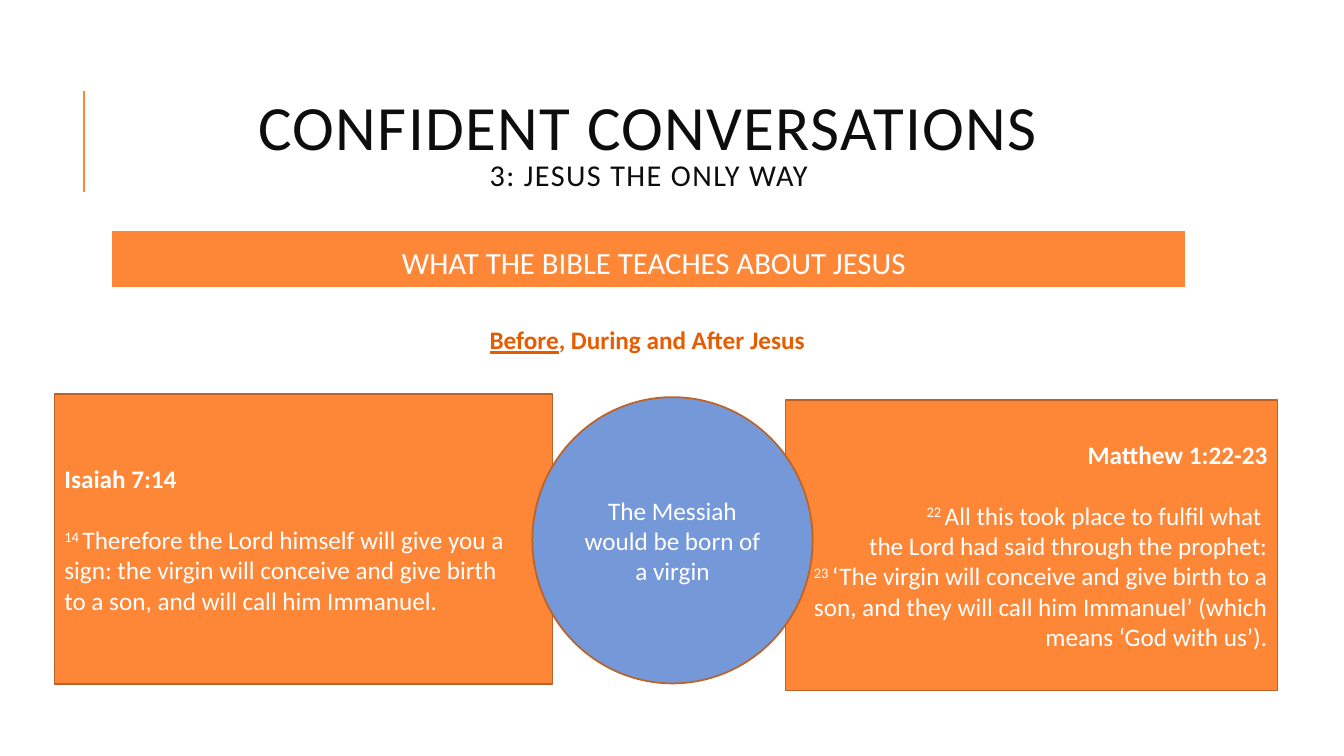
from lxml import etree
from pptx import Presentation
from pptx.dml.color import RGBColor
from pptx.enum import shapes, text
from pptx.oxml.ns import qn
from pptx.util import Pt

PX = 9144  # EMU per px, at 100 px to the inch
FONT = "Calibri"
ORANGE, RUST, BLUE = "FE8637", "BC6329", "7598D9"
WHITE, INK, ACCENT = "FFFFFF", "0D0D0D", "E75C01"
LEFT, CENTER, RIGHT = text.PP_ALIGN.LEFT, text.PP_ALIGN.CENTER, text.PP_ALIGN.RIGHT
RECT, OVAL = shapes.MSO_SHAPE.RECTANGLE, shapes.MSO_SHAPE.OVAL


def rgb(value):
    return RGBColor.from_string(value)


class SlideBuilder:
    def __init__(self, prs):
        self.slide = prs.slides.add_slide(prs.slide_layouts[5])

    def style(self, p, size, color, align=CENTER, bold=False):
        p.alignment = align
        f = p.font
        f.name, f.size, f.bold = FONT, Pt(size), bold
        f.color.rgb = rgb(color)

    def run(self, p, words, **attrs):
        r = p.add_run()
        r.text = words
        for name, value in attrs.items():
            r._r.get_or_add_rPr().set(name, value)
        return r

    def line(self, x1, y1, x2, y2, color, width):
        c = self.slide.shapes.add_connector(
            shapes.MSO_CONNECTOR.STRAIGHT, x1 * PX, y1 * PX, x2 * PX, y2 * PX)
        c.line.color.rgb, c.line.width = rgb(color), Pt(width)
        etree.SubElement(c._element.spPr, qn("a:effectLst"))

    def title(self, x, y, w, h, heading, subheading):
        sp = self.slide.shapes.title
        sp.left, sp.top, sp.width, sp.height = (v * PX for v in (x, y, w, h))
        tf = sp.text_frame
        tf.auto_size = text.MSO_AUTO_SIZE.NONE
        tf.vertical_anchor = text.MSO_ANCHOR.MIDDLE
        p = tf.paragraphs[0]
        self.style(p, 45, INK)
        p.line_spacing = 0.8
        self.run(p, heading, spc="100").font.size = Pt(45)
        p.add_line_break()
        self.run(p, subheading, spc="100").font.size = Pt(21.6)

    def shape(self, kind, x, y, w, h, fill, line, width=1.25):
        sp = self.slide.shapes.add_shape(kind, x * PX, y * PX, w * PX, h * PX)
        sp.shadow.inherit = False
        sp.fill.solid()
        sp.fill.fore_color.rgb = rgb(fill)
        sp.line.color.rgb, sp.line.width = rgb(line), Pt(width)
        tf = sp.text_frame
        tf.word_wrap = True
        tf.vertical_anchor = text.MSO_ANCHOR.MIDDLE
        return tf

    def textbox(self, x, y, w, h):
        tf = self.slide.shapes.add_textbox(x * PX, y * PX, w * PX, h * PX).text_frame
        tf.word_wrap = True
        return tf

    def verse_box(self, x, y, w, h, align, reference, lines):
        """Bold reference, then lines of (verse number or None, words)."""
        tf = self.shape(RECT, x, y, w, h, ORANGE, RUST)
        p = tf.paragraphs[0]
        self.style(p, 18, WHITE, align, bold=True)
        p.space_after = Pt(22)
        self.run(p, reference)
        for number, words in lines:
            p = tf.add_paragraph()
            self.style(p, 18, WHITE, align)
            if number:
                self.run(p, f"{number} ", baseline="30000")
            self.run(p, words)


def main():
    prs = Presentation()
    prs.slide_width, prs.slide_height = 1333 * PX, 750 * PX
    b = SlideBuilder(prs)

    # Title with its side rule
    b.line(83, 190, 83, 90, ORANGE, 1.5)
    b.title(112, 64, 1063, 164, "CONFIDENT CONVERSATIONS", "3: JESUS THE ONLY WAY")

    # Topic band
    tf = b.shape(RECT, 112, 230, 1063, 54, ORANGE, ORANGE, 0.75)
    tf.vertical_anchor = text.MSO_ANCHOR.TOP
    tf.margin_left = 15 * PX
    tf.margin_right = tf.margin_top = tf.margin_bottom = 5 * PX
    p = tf.paragraphs[0]
    b.style(p, 22, WHITE)
    p.line_spacing = 1.2
    b.run(p, "WHAT THE BIBLE TEACHES ABOUT JESUS")

    # Period heading
    p = b.textbox(112, 317, 1060, 40).paragraphs[0]
    b.style(p, 18, ACCENT, bold=True)
    b.run(p, "Before").font.underline = True
    b.run(p, ", During and After Jesus")

    # Prophecy and fulfilment
    b.verse_box(779, 397, 488, 288, RIGHT, "Matthew 1:22-23", [
        ("22", "All this took place to fulfil what "),
        (None, "the Lord had said through the prophet:"),
        ("23", "‘The virgin will conceive and give birth to a son, and they "
               "will call him Immanuel’ (which means ‘God with us’)."),
    ])
    b.verse_box(54, 391, 494, 288, LEFT, "Isaiah 7:14", [
        ("14", "Therefore the Lord himself will give you a sign: "
               "the virgin will conceive and give birth"),
        (None, "to a son, and will call him Immanuel."),
    ])

    # Shared message
    p = b.shape(OVAL, 528, 394, 278, 284, BLUE, RUST).paragraphs[0]
    b.style(p, 18, WHITE)
    b.run(p, "The Messiah would be born of a virgin")

    prs.save("out.pptx")


if __name__ == "__main__":
    main()
